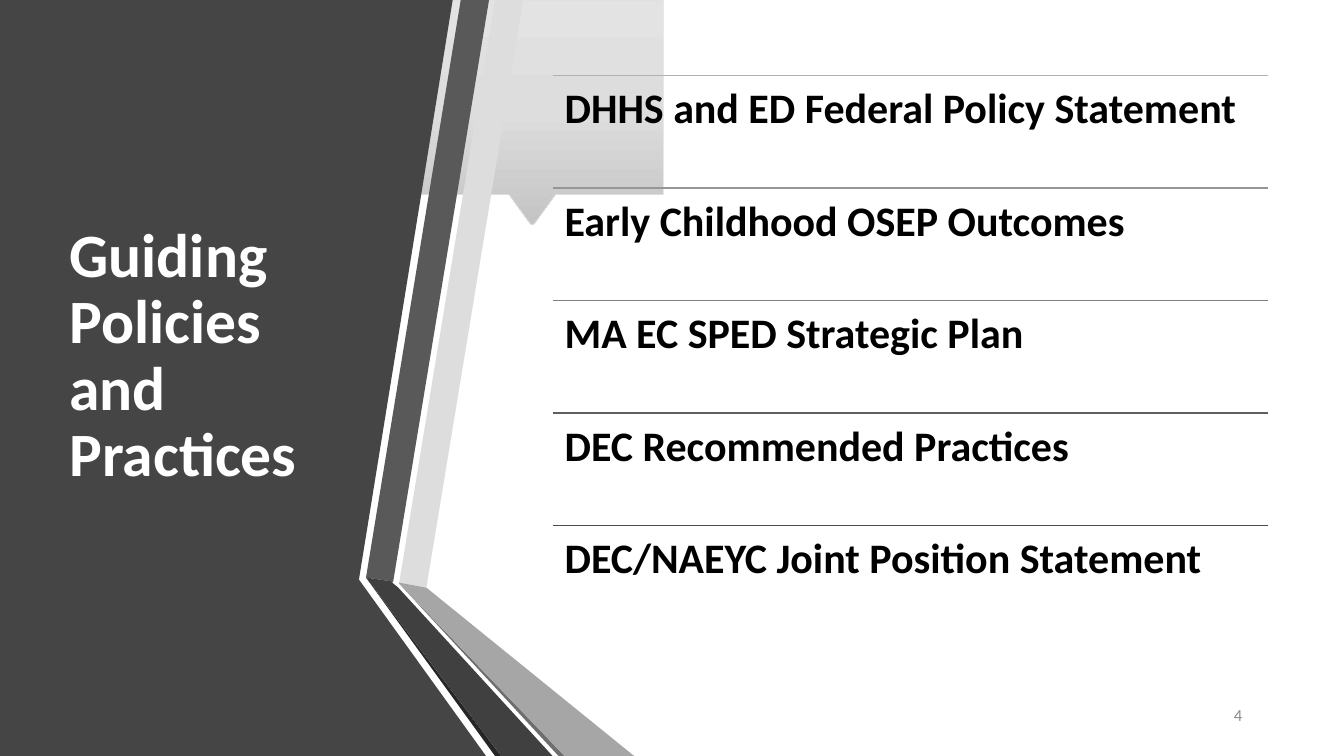
from copy import deepcopy
from dataclasses import dataclass

from pptx import Presentation
from pptx import util as u
from pptx.dml.color import RGBColor
from pptx.enum import shapes, text
from pptx.oxml import ns
from pptx.oxml.xmlchemy import OxmlElement


@dataclass(frozen=True)
class Theme:
    font: str = "Calibri"
    white: str = "FFFFFF"
    black: str = "000000"
    page: str = "8C8C8C"
    panel: str = "454545"
    pale: str = "DDDDDD"
    slate: str = "595959"
    deep: str = "404040"
    shade: str = "262626"
    ash: str = "A6A6A6"
    dim: str = "6E6E6E"
    fade: tuple = ((0, "E3E3E3"), (0.5, "DDDDDD"), (1, "C4C4C4"))
    rules: tuple = ("B2B2B2", "969696", "808080", "5F5F5F", "4D4D4D")
    head: int = 44
    item: int = 30
    small: int = 12


class Deck:
    def __init__(self, theme):
        self.theme = theme
        self.prs = Presentation()
        self.prs.slide_width = u.Inches(13.33)
        self.prs.slide_height = u.Inches(7.5)
        self.slide = self.prs.slides.add_slide(self.prs.slide_layouts[5])
        self.shapes = self.slide.shapes

    def outline(self, points, color=None):
        spots = [(u.Inches(x), u.Inches(y)) for x, y in points]
        form = self.shapes.build_freeform(*spots[0], scale=1.0)
        form.add_line_segments(spots[1:], close=True)
        shape = form.convert_to_shape()
        shape.shadow.inherit = False
        shape.line.fill.background()
        if color:
            shape.fill.solid()
            shape.fill.fore_color.rgb = RGBColor.from_string(color)
        return shape

    def tag(self, points):
        shape = self.outline(points)
        fill = shape.fill
        fill.gradient()
        fill.gradient_angle = 270
        stops = shape._element.spPr.find(".//" + ns.qn("a:gsLst"))
        stops.append(deepcopy(stops[0]))
        for stop, (pos, color) in zip(fill.gradient_stops, self.theme.fade):
            stop.position = pos
            stop.color.rgb = RGBColor.from_string(color)
        shape.line.color.rgb = RGBColor.from_string(self.theme.pale)
        shape.line.width = u.Pt(0.5)

    def label(self, shape, words, size, color, bold=True, anchor=text.MSO_ANCHOR.TOP,
              align=text.PP_ALIGN.LEFT):
        frame = shape.text_frame
        frame.text = words
        frame.word_wrap = True
        frame.auto_size = text.MSO_AUTO_SIZE.NONE
        frame.vertical_anchor = anchor
        para = frame.paragraphs[0]
        para.alignment = align
        para.line_spacing = 0.9
        font = para.runs[0].font
        font.name, font.size, font.bold = self.theme.font, u.Pt(size), bold
        font.color.rgb = RGBColor.from_string(color)
        return frame

    def title(self, words, left, top, width, height):
        shape = self.shapes.title
        shape.left, shape.top = u.Inches(left), u.Inches(top)
        shape.width, shape.height = u.Inches(width), u.Inches(height)
        self.label(shape, words, self.theme.head, self.theme.white,
                   anchor=text.MSO_ANCHOR.MIDDLE)
        self.shapes._spTree.append(shape._element)

    def box(self, left, top, width, height):
        return self.shapes.add_textbox(*map(u.Inches, (left, top, width, height)))

    def item(self, words, left, top, width, height):
        frame = self.label(self.box(left, top, width, height), words,
                           self.theme.item, self.theme.black)
        frame.margin_left = frame.margin_right = u.Inches(0.12)
        frame.margin_top = frame.margin_bottom = u.Inches(0.12)

    def rule(self, left, top, width, color):
        line = self.shapes.add_connector(
            shapes.MSO_CONNECTOR.STRAIGHT, u.Inches(left), u.Inches(top),
            u.Inches(left + width), u.Inches(top))
        line.line.color.rgb = RGBColor.from_string(color)
        line.line.width = u.Pt(1)
        line._element.spPr.append(OxmlElement("a:effectLst"))

    def number(self, words, left, top, width, height):
        self.label(self.box(left, top, width, height), words, self.theme.small,
                   self.theme.page, bold=False, anchor=text.MSO_ANCHOR.MIDDLE,
                   align=text.PP_ALIGN.RIGHT)


def main():
    theme = Theme()
    deck = Deck(theme)

    deck.tag([(0.01, 0), (6.58, 0), (6.58, 1.93), (5.51, 1.93), (5.3, 2.22),
              (5.28, 2.23), (5.26, 2.22), (5.05, 1.93), (0.01, 1.93)])

    bands = (
        (theme.panel, [(0, 0), (4.49, 0), (3.56, 5.75), (4.82, 7.5), (0, 7.5)]),
        (theme.pale, [(3.96, 5.78), (4.23, 5.83), (5.19, 0), (4.91, 0)]),
        (theme.slate, [(4.85, 0), (4.57, 0), (3.63, 5.73), (3.9, 5.77)]),
        (theme.shade, [(3.63, 5.73), (4.91, 7.5), (4.97, 7.5)]),
        (theme.dim, [(3.96, 5.79), (5.54, 7.5), (5.6, 7.5)]),
        (theme.ash, [(3.96, 5.79), (5.6, 7.5), (6.29, 7.5), (4.23, 5.83), (3.96, 5.78)]),
        (theme.deep, [(5.48, 7.5), (3.95, 5.83), (3.89, 5.78), (3.9, 5.77),
                      (3.63, 5.73), (4.97, 7.5)]),
    )
    for color, points in bands:
        deck.outline(points, color)

    deck.title("Guiding Policies and Practices", 0.59, 0.75, 3.04, 5.58)
    deck.number("4", 11.23, 6.9, 1.19, 0.4)

    items = (
        "DHHS and ED Federal Policy Statement",
        "Early Childhood OSEP Outcomes",
        "MA EC SPED Strategic Plan",
        "DEC Recommended Practices",
        "DEC/NAEYC Joint Position Statement",
    )
    left, top, width, height = 5.48, 0.75, 7.1, 5.58
    step = height / len(items)
    for row, (words, color) in enumerate(zip(items, theme.rules)):
        y = top + row * step
        deck.rule(left, y, width, color)
        deck.item(words, left, y, width, step)

    deck.prs.save("out.pptx")


if __name__ == "__main__":
    main()
